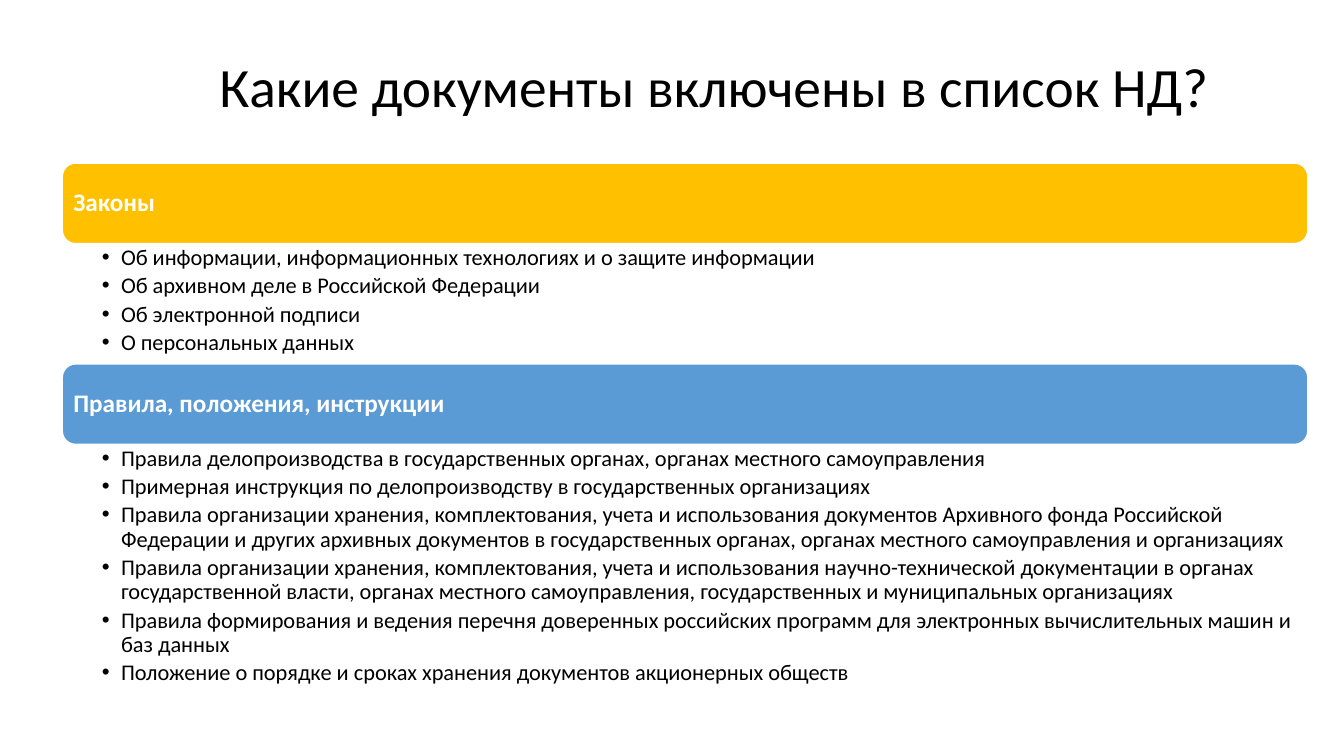
from lxml.etree import SubElement
from pptx import Presentation
from pptx.dml.color import RGBColor
from pptx.enum.shapes import MSO_SHAPE
from pptx.enum.text import MSO_ANCHOR, MSO_AUTO_SIZE, PP_ALIGN
from pptx.oxml.ns import qn
from pptx.util import Cm, Pt

BLACK = RGBColor(0x00, 0x00, 0x00)
WHITE = RGBColor(0xFF, 0xFF, 0xFF)
AMBER = RGBColor(0xFF, 0xC0, 0x00)
BLUE = RGBColor(0x5B, 0x9B, 0xD5)

LEFT, WIDTH = 1.57, 31.39
SECTIONS_TOP = 4.11
HEADING_HEIGHT = 2.03

TITLE = "Какие документы включены в список НД?"
# heading, colour, height of the list in cm, documents
SECTIONS = [
    ("Законы", AMBER, 3.03, [
        "Об информации, информационных технологиях и о защите информации",
        "Об архивном деле в Российской Федерации",
        "Об электронной подписи",
        "О персональных данных",
    ]),
    ("Правила, положения, инструкции", BLUE, 6.4, [
        "Правила делопроизводства в государственных органах, органах местного самоуправления",
        "Примерная инструкция по делопроизводству в государственных организациях",
        "Правила организации хранения, комплектования, учета и использования документов "
        "Архивного фонда Российской Федерации и других архивных документов в государственных "
        "органах, органах местного самоуправления и организациях",
        "Правила организации хранения, комплектования, учета и использования "
        "научно-технической документации в органах государственной власти, органах местного "
        "самоуправления, государственных и муниципальных организациях",
        "Правила формирования и ведения перечня доверенных российских программ для "
        "электронных вычислительных машин и баз данных",
        "Положение о порядке и сроках хранения документов акционерных обществ",
    ]),
]


def place(shape, left, top, width, height):
    shape.left, shape.top = Cm(left), Cm(top)
    shape.width, shape.height = Cm(width), Cm(height)


def add_bullet(paragraph):
    properties = paragraph._p.get_or_add_pPr()
    properties.set("marL", str(Cm(0.48)))
    properties.set("indent", str(-Cm(0.48)))
    SubElement(properties, qn("a:buFont"), typeface="Arial")
    SubElement(properties, qn("a:buChar"), char="•")


def write(shape, lines, *, size, color=BLACK, bold=False, bullets=False,
          space_after=0, anchor=MSO_ANCHOR.TOP, insets=(0.25, 0.13, 0.25, 0.13)):
    """Fill the shape with one paragraph per line; insets are left, top, right, bottom in cm."""
    frame = shape.text_frame
    frame.word_wrap = True
    frame.auto_size = MSO_AUTO_SIZE.NONE
    frame.vertical_anchor = anchor
    (frame.margin_left, frame.margin_top,
     frame.margin_right, frame.margin_bottom) = map(Cm, insets)
    for index, line in enumerate(lines):
        paragraph = frame.add_paragraph() if index else frame.paragraphs[0]
        if bullets:
            add_bullet(paragraph)
        paragraph.alignment = PP_ALIGN.LEFT
        paragraph.line_spacing = 0.9
        paragraph.space_before = Pt(0)
        paragraph.space_after = Pt(space_after)
        run = paragraph.add_run()
        run.text = line
        run.font.name = "Calibri"
        run.font.size = Pt(size)
        run.font.bold = bold
        run.font.color.rgb = color


def add_heading(slide, heading, color, top):
    bar = slide.shapes.add_shape(MSO_SHAPE.ROUNDED_RECTANGLE, Cm(LEFT), Cm(top),
                                 Cm(WIDTH), Cm(HEADING_HEIGHT))
    bar.shadow.inherit = False
    bar.fill.solid()
    bar.fill.fore_color.rgb = color
    bar.line.color.rgb = WHITE
    bar.line.width = Pt(1)
    write(bar, [heading], size=18, color=WHITE, bold=True,
          anchor=MSO_ANCHOR.MIDDLE, insets=(0.18,) * 4)


def fill_list(placeholder, documents, top, height):
    place(placeholder, LEFT, top, WIDTH, height)
    write(placeholder, documents, size=16, bullets=True, space_after=3,
          insets=(1, 0.06, 0.3, 0.06))


def main():
    presentation = Presentation()
    presentation.slide_width, presentation.slide_height = Cm(33.87), Cm(19.05)
    two_content = presentation.slide_layouts.get_by_name("Two Content")
    slide = presentation.slides.add_slide(two_content)

    title = slide.shapes.title
    place(title, 5.28, 1.37, 26.09, 1.47)
    write(title, [TITLE], size=39.6)

    top = SECTIONS_TOP
    for index, (heading, color, list_height, documents) in enumerate(SECTIONS, start=1):
        add_heading(slide, heading, color, top)
        fill_list(slide.placeholders[index], documents, top + HEADING_HEIGHT, list_height)
        top += HEADING_HEIGHT + list_height

    presentation.save("out.pptx")


if __name__ == "__main__":
    main()
